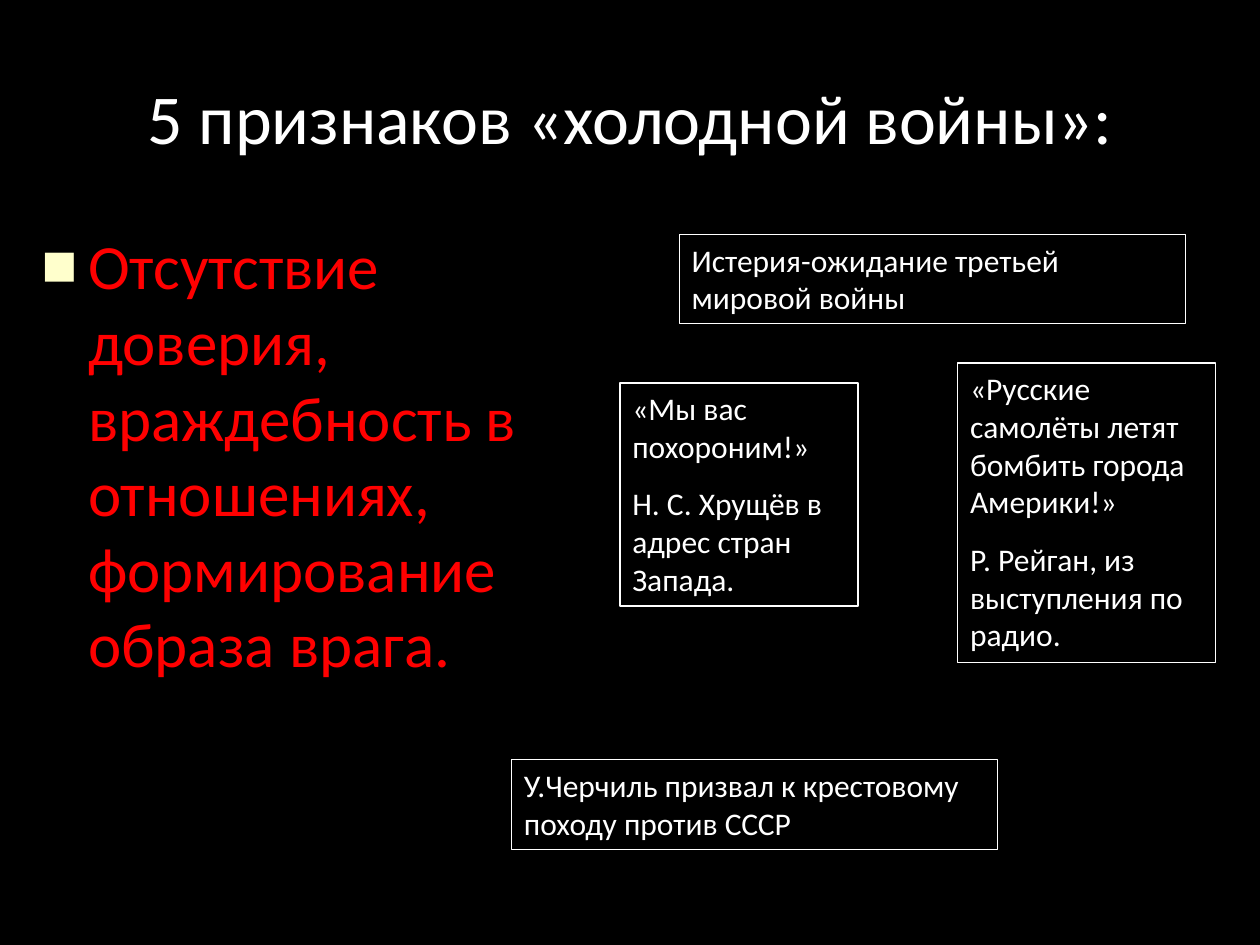
"""Build a slide on the signs of the Cold War."""
from lxml.etree import SubElement
from pptx import Presentation
from pptx.dml.color import RGBColor
from pptx.enum.shapes import MSO_SHAPE
from pptx.enum.text import MSO_ANCHOR, MSO_AUTO_SIZE, PP_ALIGN
from pptx.oxml.ns import qn
from pptx.util import Inches, Pt

COLORS = {"background": "000000", "text": "FFFFFF", "accent": "FF0000", "bullet": "FFFFCC"}
FONT = "Calibri"
TITLE = "5 признаков «холодной войны»:"
SIGN = "Отсутствие доверия, враждебность в отношениях, формирование образа врага."
EXAMPLES = [
    ((5.39, 1.86, 4.02, 0.71), ["Истерия-ожидание третьей мировой войны"]),
    ((4.92, 3.04, 1.89, 1.77), ["«Мы вас похороним!»", "Н. С. Хрущёв в адрес стран Запада."]),
    ((7.6, 2.88, 2.05, 2.38), ["«Русские самолёты летят бомбить города Америки!»",
                               "Р. Рейган, из выступления по радио."]),
    ((4.06, 6.03, 3.86, 0.71), ["У.Черчиль призвал к крестовому походу против СССР"]),
]


def color(name):
    return RGBColor.from_string(COLORS[name])


def place(shape, area):
    shape.left, shape.top, shape.width, shape.height = map(Inches, area)


def write(shape, texts, size, tone, align, before, anchor, fit=MSO_AUTO_SIZE.NONE):
    frame = shape.text_frame
    frame.word_wrap = True
    frame.auto_size = fit
    frame.vertical_anchor = anchor
    for index, text in enumerate(texts):
        para = frame.add_paragraph() if index else frame.paragraphs[0]
        para.alignment = align
        para.space_before = Pt(before)
        span = para.add_run()
        span.text = text
        span.font.name = FONT
        span.font.size = Pt(size)
        span.font.color.rgb = color(tone)


def add_bullet(para):
    properties = para._p.get_or_add_pPr()
    properties.set("marL", str(Inches(0.37)))
    properties.set("indent", str(Inches(-0.37)))
    tint = SubElement(properties, qn("a:buClr"))
    SubElement(tint, qn("a:srgbClr"), val=COLORS["bullet"])
    SubElement(properties, qn("a:buSzPct"), val="60000")
    SubElement(properties, qn("a:buFont"), typeface=FONT)
    SubElement(properties, qn("a:buChar"), char="■")


def add_example(page, area, texts):
    box = page.shapes.add_shape(MSO_SHAPE.RECTANGLE, *map(Inches, area))
    box.shadow.inherit = False
    box.fill.background()
    box.line.color.rgb = color("text")
    box.line.width = Pt(0.75)
    write(box, texts, 18, "text", PP_ALIGN.LEFT, 11.2, MSO_ANCHOR.TOP,
          MSO_AUTO_SIZE.SHAPE_TO_FIT_TEXT)


def main():
    deck = Presentation()
    deck.slide_width, deck.slide_height = Inches(10), Inches(7.5)
    page = deck.slides.add_slide(deck.slide_layouts[1])
    page.background.fill.solid()
    page.background.fill.fore_color.rgb = color("background")
    title, body = page.placeholders
    place(title, (0.5, 0.3, 9, 1.25))
    write(title, [TITLE], 40, "text", PP_ALIGN.CENTER, 0, MSO_ANCHOR.MIDDLE)
    place(body, (0.23, 1.75, 4.68, 4.95))
    write(body, [SIGN], 36, "accent", PP_ALIGN.LEFT, 7, MSO_ANCHOR.TOP)
    add_bullet(body.text_frame.paragraphs[0])
    for area, texts in EXAMPLES:
        add_example(page, area, texts)
    deck.save("out.pptx")


if __name__ == "__main__":
    main()
